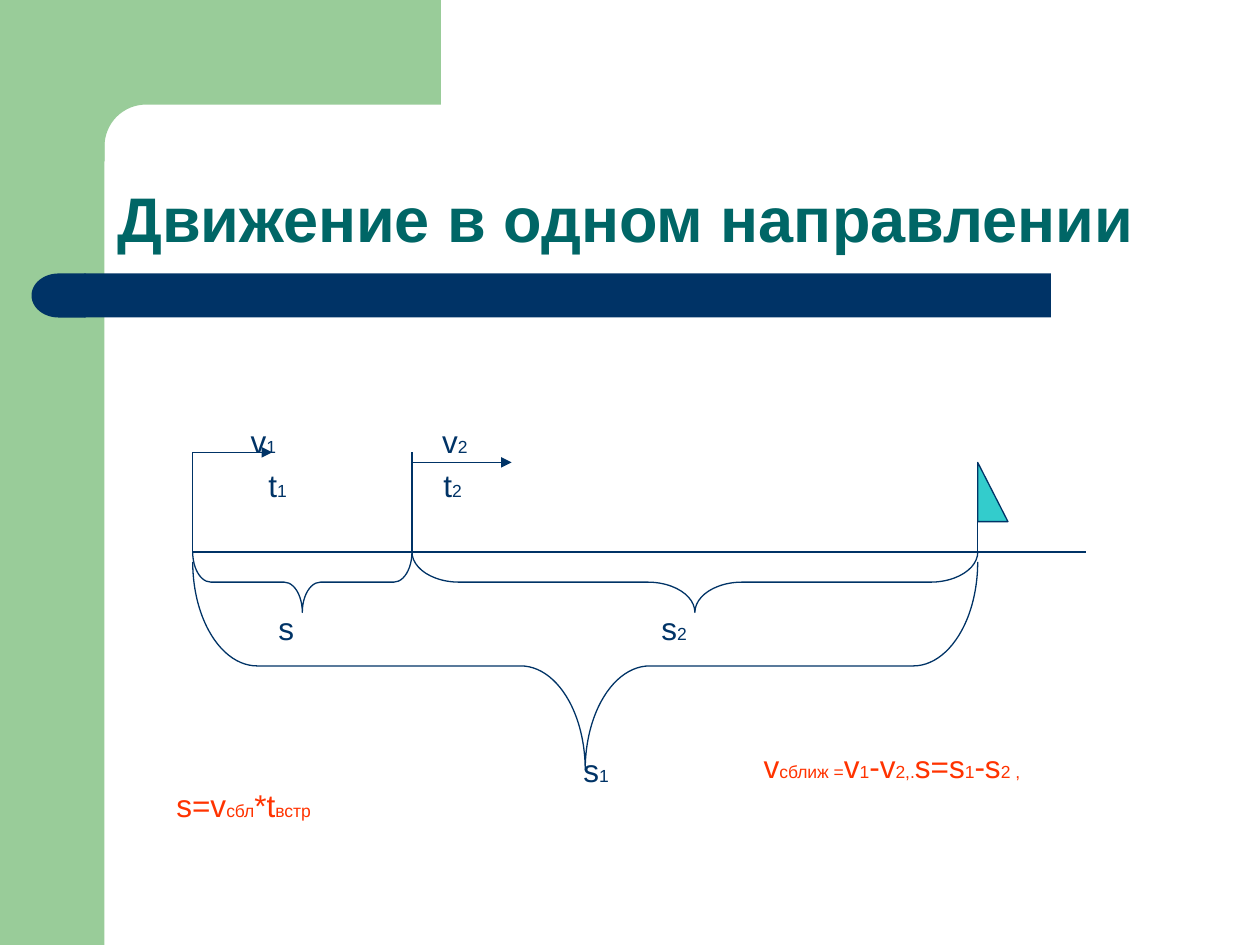
"""Build a slide on motion in one direction, with a distance diagram."""
from math import cos, pi, sin

from lxml import etree
from pptx import Presentation
from pptx.dml.color import RGBColor
from pptx.enum.shapes import MSO_CONNECTOR, MSO_SHAPE
from pptx.enum.text import MSO_ANCHOR, MSO_AUTO_SIZE, PP_ALIGN
from pptx.oxml.ns import qn
from pptx.util import Inches, Pt

RECT, DELAY = MSO_SHAPE.RECTANGLE, MSO_SHAPE.FLOWCHART_DELAY
FLAG, BRACE = MSO_SHAPE.RIGHT_TRIANGLE, MSO_SHAPE.LEFT_BRACE
STRAIGHT = MSO_CONNECTOR.STRAIGHT
BOTTOM, LEFT, FIXED = MSO_ANCHOR.BOTTOM, PP_ALIGN.LEFT, MSO_AUTO_SIZE.NONE

COLORS = {"green": "99CC99", "navy": "003366", "teal": "006666",
          "flag": "33CCCC", "red": "FF3300"}
FONT, BIG, SMALL = "Arial", 18, 10
TITLE = "Движение в одном направлении"

START, MID, GOAL, END = 1.53, 3.27, 7.76, 8.62
AXIS, HIGH, LOW = 4.38, 3.59, 3.67
LINES = [
    (START, AXIS, END, AXIS, False),
    (START, AXIS, START, HIGH, False),
    (MID, AXIS, MID, HIGH, False),
    (GOAL, AXIS, GOAL, LOW, False),
    (START, HIGH, 2.16, HIGH, True),
    (MID, LOW, 4.06, LOW, True),
]
BRACES = [
    (START, MID, 4.38, 0.48, 0.3),
    (MID, GOAL, 4.38, 0.48, 0.78),
    (START, GOAL, 4.46, 1.65, 0.31),
]
LABELS = [
    (1.99, 3.35, "v", "1"), (3.51, 3.35, "v", "2"),
    (2.13, 3.7, "t", "1"), (3.52, 3.7, "t", "2"),
    (2.21, 4.83, "s", ""), (5.25, 4.83, "s", "2"),
    (4.63, 5.96, "s", "1"),
]
RULES = [
    (5.04, ["v", "сближ =", "v", "1", "-v", "2,.", "s=s", "1", "-s", "2 ,"]),
    (0.38, ["s=v", "сбл", "*t", "встр"]),
]


def rgb(name):
    return RGBColor.from_string(COLORS[name])


def place(shape, *box):
    shape.left, shape.top, shape.width, shape.height = map(Inches, box)


def paint(shape, fill=None, line=None):
    shape.shadow.inherit = False
    if fill:
        shape.fill.solid()
        shape.fill.fore_color.rgb = rgb(fill)
    else:
        shape.fill.background()
    if line:
        shape.line.color.rgb = rgb(line)
        shape.line.width = Pt(0.75)
    else:
        shape.line.fill.background()
    return shape


def add(kind, *box, fill=None, line=None):
    return paint(shapes.add_shape(kind, *map(Inches, box)), fill, line)


def style(run, size, color):
    run.font.name, run.font.size = FONT, Pt(size)
    run.font.color.rgb = rgb(color)


def write(para, parts, color):
    for i, part in enumerate(parts):
        run = para.add_run()
        run.text = part
        style(run, SMALL if i % 2 else BIG, color)


def corner():
    hub, size = 1.16, 0.33
    arc = [(hub - size * sin(i * pi / 32), hub - size * cos(i * pi / 32))
           for i in range(17)]
    dots = [(3.5, 0), (3.5, 0.83), *arc, (0.83, 1.28), (0.5, 1.28), (0.5, 0)]
    dots = [(Inches(x), Inches(y)) for x, y in dots]
    path = shapes.build_freeform(*dots[0])
    path.add_line_segments(dots[1:], close=True)
    paint(path.convert_to_shape(), "green")


def link(x1, y1, x2, y2, arrow):
    line = shapes.add_connector(STRAIGHT, *map(Inches, (x1, y1, x2, y2)))
    line.line.color.rgb = rgb("navy")
    line.line.width = Pt(0.75)
    if arrow:
        etree.SubElement(line.line._get_or_add_ln(), qn("a:tailEnd"),
                         type="triangle")
    etree.SubElement(line._element.spPr, qn("a:effectLst"))


def brace(x1, x2, top, deep, bend):
    wide = x2 - x1
    shape = add(BRACE, (x1 + x2 - deep) / 2, top + (deep - wide) / 2,
                deep, wide, line="navy")
    shape.rotation = 270
    shape.adjustments[0] = bend


def label(x, y, name, sub):
    box = shapes.add_textbox(*map(Inches, (x, y, 0.4, 0.3)))
    frame = box.text_frame
    frame.margin_left = frame.margin_right = 0
    frame.margin_top = frame.margin_bottom = 0
    frame.word_wrap = True
    write(frame.paragraphs[0], [name, sub] if sub else [name], "navy")


deck = Presentation()
deck.slide_width, deck.slide_height = Inches(10), Inches(7.5)
slide = deck.slides.add_slide(deck.slide_layouts[1])
shapes = slide.shapes

add(RECT, 0, 0, 0.83, 7.5, fill="green")
corner()
add(RECT, 0.67, 2.17, 7.67, 0.35, fill="navy")
cap = add(DELAY, 0.25, 2.17, 0.43, 0.35, fill="navy")
cap.rotation = 180

title, body = shapes.title, slide.placeholders[1]
place(title, 0.83, 0.83, 8.67, 1.25)
title.text_frame.text = TITLE
title.text_frame.auto_size = FIXED
title.text_frame.vertical_anchor = BOTTOM
head = title.text_frame.paragraphs[0]
head.alignment, head.line_spacing = LEFT, 0.9
style(head.runs[0], 36, "teal")
head.runs[0].font.bold = True

place(body, 0.92, 2.58, 8.41, 4.07)
frame = body.text_frame
frame.auto_size, frame.vertical_anchor = FIXED, BOTTOM
frame.margin_bottom = Inches(0.11)
for i, (indent, parts) in enumerate(RULES):
    para = frame.add_paragraph() if i else frame.paragraphs[0]
    para.space_before = Pt(1)
    props = para._p.get_or_add_pPr()
    props.set("marL", str(Inches(indent)))
    props.set("indent", "0")
    etree.SubElement(props, qn("a:buNone"))
    write(para, parts, "red")

for line in LINES:
    link(*line)
add(FLAG, GOAL, LOW, 0.24, 0.47, fill="flag", line="navy")
for span in BRACES:
    brace(*span)
for item in LABELS:
    label(*item)

deck.save("out.pptx")
